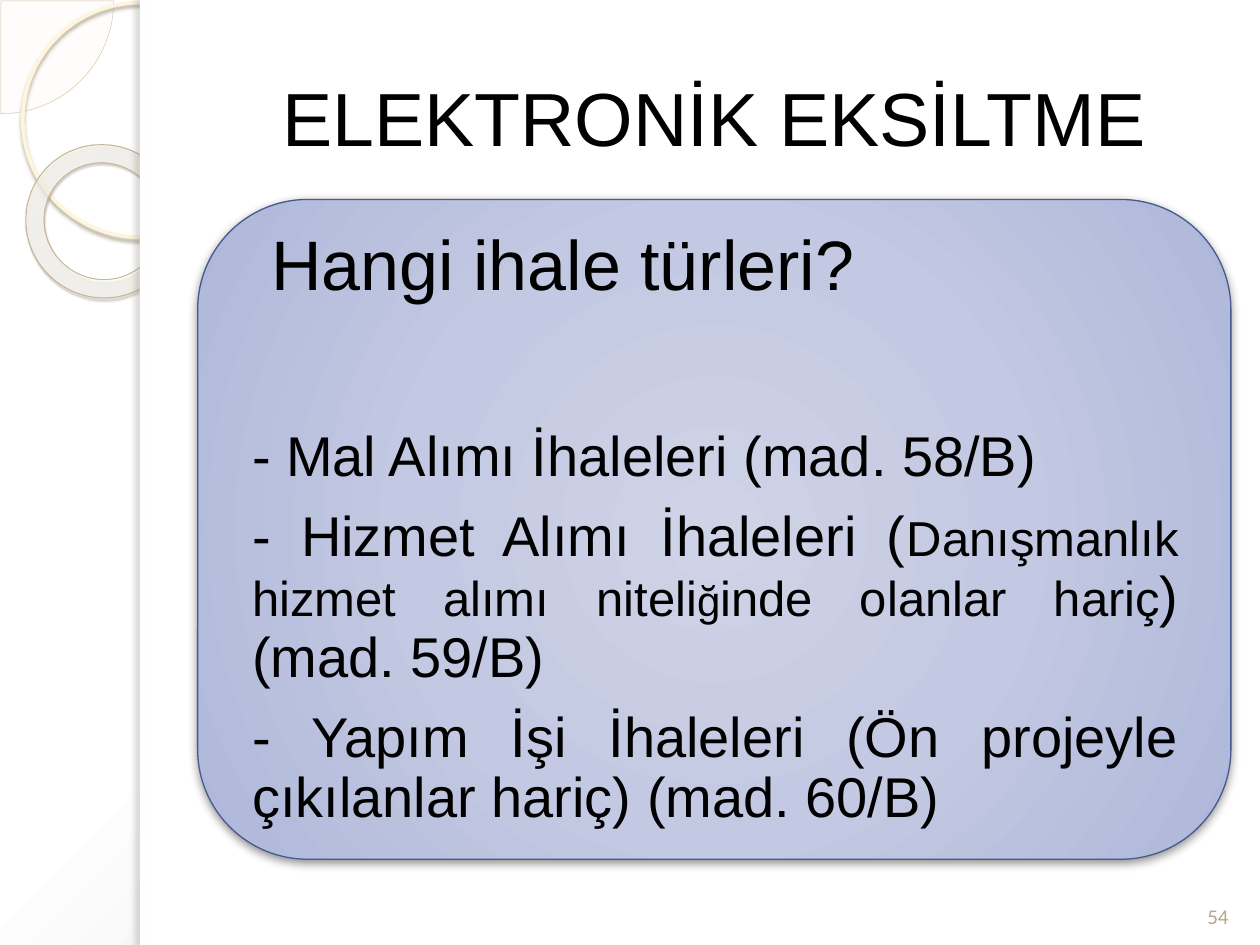
from pptx import Presentation
from pptx.util import Pt
from pptx.dml.color import RGBColor
from pptx.enum.shapes import MSO_SHAPE as Form
from pptx.enum.text import PP_ALIGN as Align, MSO_ANCHOR as Anchor, MSO_AUTO_SIZE as Auto
from pptx.oxml import parse_xml
from pptx.oxml.ns import nsdecls
from lxml.etree import SubElement

# Content: each paragraph is a list of (text, size name) runs
TITLE = "ELEKTRONİK EKSİLTME"
HEAD = "Hangi ihale türleri?"
ITEMS = [
    [("- Mal Alımı İhaleleri (mad. 58/B)", "item")],
    [("- Hizmet Alımı İhaleleri (", "item"),
     ("Danışmanlık hizmet alımı niteli", "note"), ("ğ", "small"),
     ("inde olanlar hariç", "note"), (") (mad. 59/B)", "item")],
    [("- Yapım İşi İhaleleri (Ön projeyle çıkılanlar hariç) (mad. 60/B)", "item")],
]
NUMBER = "54"

THEME = {
    "font": "Arial", "num font": "Calibri",
    "size": {"title": 43, "head": 40, "item": 32, "note": 28, "small": 24, "num": 12},
    "text": "000000", "num": "B6A98A", "panel": "FFFFFF",
    # Gradients: stops of (place, colour, alpha), then the focus rectangle
    "page": ([(0, "FFFFFF", 100), (40, "FFFFFF", 100), (100, "C5C5C5", 100)],
             (-24, -20, 124, 120)),
    "pie": ([(0, "FEFAF4", 33), (100, "FEFAF4", 33)], (50, 50, 50, 50)),
    "ring": ([(0, "FFFCF6", 70), (70, "FFFEFB", 55), (100, "F0D28E", 60)],
             (-408, -50, 508, 150)),
    "card": ([(0, "CFD3E7", 100), (50, "C3C9E2", 100), (97, "AFB8DA", 100),
              (100, "A8B2DA", 100)], (50, 50, 50, 50)),
}

# Shapes from back to front: form, box, fill, line, shadow, turn, adjustments
# A shadow is colour, alpha, blur, distance, angle
SHAPES = [
    (Form.PIE, (-64, -64, 129, 129), "pie", ("D3C39F", 0.25), None, 0, (0, 54.02)),
    (Form.OVAL, (13, 1.5, 134, 134), None, ("FFF5DE", 2.15),
     ("B0A68F", 85, 2, 2, 90), 0, ()),
    (Form.DONUT, (14.5, 83, 88.5, 87), "ring", ("C7B893", 0.58),
     ("5A5444", 35, 1, 1.2, 75), 38.6, (0.12,)),
    (Form.RECTANGLE, (80, 0, 640, 540), "panel", None, None, 0, ()),
    (Form.RECTANGLE, (80, 0, 6, 540), "panel", None, ("736F63", 25, 3, 3, 180), 0, ()),
    (Form.ROUNDED_RECTANGLE, (113, 114, 590.4, 377), "card", ("475A8D", 0.75),
     ("000000", 43, 5, 2, 90), 0, ()),
]


def color(hue):
    return RGBColor.from_string(hue)


def tint(hue, alpha):
    return f'<a:srgbClr val="{hue}"><a:alpha val="{alpha * 1000}"/></a:srgbClr>'


def blend(stops, focus):
    marks = "".join(f'<a:gs pos="{at * 1000}">{tint(hue, alpha)}</a:gs>'
                    for at, hue, alpha in stops)
    rect = " ".join(f'{side}="{part * 1000}"' for side, part in zip("ltrb", focus))
    return parse_xml(f'<a:gradFill {nsdecls("a")} rotWithShape="1"><a:gsLst>{marks}</a:gsLst>'
                     f'<a:path path="circle"><a:fillToRect {rect}/></a:path></a:gradFill>')


def swap(host, name):
    """Put a theme gradient where the solid fill stands."""
    old = host.find(".//{*}solidFill")
    old.getparent().replace(old, blend(*THEME[name]))


def draw(slide, form, box, fill, line, shade, turn, adjust):
    shape = slide.shapes.add_shape(form, *map(Pt, box))
    shape.rotation = turn
    for i, value in enumerate(adjust):
        shape.adjustments[i] = value
    if fill:
        shape.fill.solid()
        if fill == "panel":
            shape.fill.fore_color.rgb = color(THEME[fill])
        else:
            swap(shape._element.spPr, fill)
    else:
        shape.fill.background()
    if line:
        shape.line.color.rgb = color(line[0])
        shape.line.width = Pt(line[1])
    else:
        shape.line.fill.background()
    shape.shadow.inherit = False
    if shade:
        hue, alpha, blur, dist, angle = shade
        shape._element.spPr.find("{*}effectLst").append(parse_xml(
            f'<a:outerShdw {nsdecls("a")} blurRad="{Pt(blur)}" dist="{Pt(dist)}" '
            f'dir="{angle * 60000}" rotWithShape="0">{tint(hue, alpha)}</a:outerShdw>'))


def place(shape, box, anchor, inset=None):
    shape.left, shape.top, shape.width, shape.height = map(Pt, box)
    frame = shape.text_frame
    frame.word_wrap, frame.auto_size = True, Auto.NONE
    frame.vertical_anchor = anchor
    if inset is not None:
        frame.margin_left = frame.margin_right = Pt(inset)
        frame.margin_top = frame.margin_bottom = Pt(inset)
    return frame


def style(para, size, align, font="font", hue="text"):
    para.alignment = align
    para.font.name = THEME[font]
    para.font.size = Pt(THEME["size"][size])
    para.font.color.rgb = color(THEME[hue])


def write(para, runs, size, after, left=0):
    style(para, size, Align.JUSTIFY)
    para.line_spacing, para.space_before, para.space_after = 0.9, Pt(0), Pt(after)
    props = para._p.get_or_add_pPr()
    props.set("marL", str(Pt(left)))
    props.set("indent", "0")
    bare = parse_xml(f'<a:buNone {nsdecls("a")}/>')
    props.find("{*}defRPr").addprevious(bare)
    for text, kind in runs:
        run = para.add_run()
        run.text = text
        run.font.name = THEME["font"]
        run.font.size = Pt(THEME["size"][kind])


def main():
    deck = Presentation()
    deck.slide_width, deck.slide_height = Pt(720), Pt(540)
    slide = deck.slides.add_slide(deck.slide_layouts[1])
    title, body = slide.shapes.title, slide.placeholders[1]

    # Background and shapes
    slide.background.fill.solid()
    swap(slide.background._cSld, "page")
    for item in SHAPES:
        draw(slide, *item)

    # Title and list, in front of the shapes
    for part in (title, body):
        slide.shapes._spTree.append(part._element)
    frame = place(title, (113, 21.6, 590.4, 90), Anchor.MIDDLE)
    frame.text = TITLE
    style(frame.paragraphs[0], "title", Align.CENTER)
    frame = place(body, (132, 132.5, 553.5, 340.5), Anchor.MIDDLE, 12)
    write(frame.paragraphs[0], [(HEAD, "head")], "head", 70, 11)
    for runs in ITEMS:
        write(frame.add_paragraph(), runs, "item", 11.2)

    # Page number
    frame = place(slide.shapes.add_textbox(0, 0, 0, 0), (678, 497, 36, 37), Anchor.BOTTOM)
    frame.text = NUMBER
    style(frame.paragraphs[0], "num", Align.CENTER, "num font", "num")
    deck.save("out.pptx")


if __name__ == "__main__":
    main()
